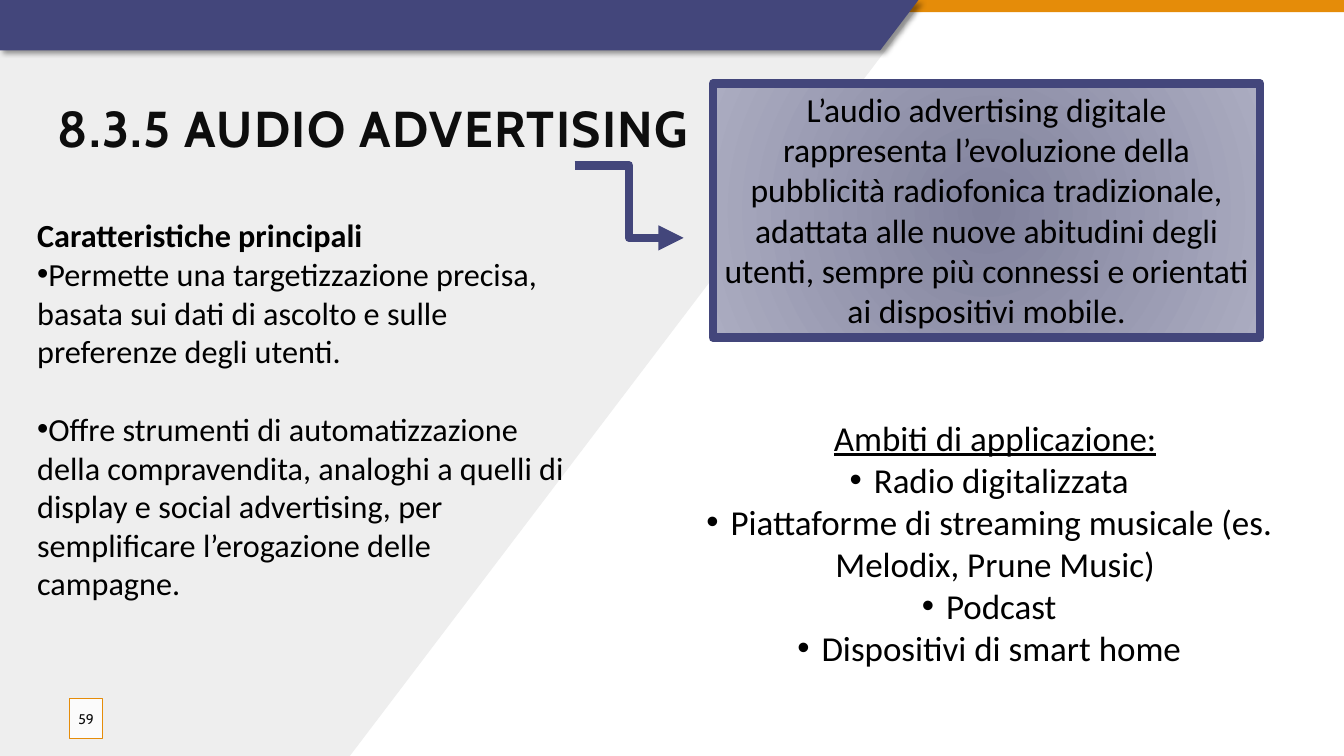
"""Build the audio advertising slide."""
import pptx
import pptx.util
import pptx.dml.color
import pptx.enum.shapes
import pptx.enum.text
import pptx.oxml
import pptx.oxml.ns

Inches = pptx.util.Inches
Pt = pptx.util.Pt
RGBColor = pptx.dml.color.RGBColor
MSO_SHAPE = pptx.enum.shapes.MSO_SHAPE
ALIGN = pptx.enum.text.PP_ALIGN
ANCHOR = pptx.enum.text.MSO_ANCHOR
AUTO_SIZE = pptx.enum.text.MSO_AUTO_SIZE
qn = pptx.oxml.ns.qn

INDIGO = RGBColor(0x43, 0x46, 0x7B)
ORANGE = RGBColor(0xE5, 0x8C, 0x09)
GREY = RGBColor(0xEE, 0xEE, 0xEE)
WHITE = RGBColor(0xFF, 0xFF, 0xFF)
BLACK = RGBColor(0, 0, 0)
INK = RGBColor(0x0D, 0x0D, 0x0D)


def xml(markup):
    """Parse one DrawingML element."""
    space = ' xmlns:a="http://schemas.openxmlformats.org/drawingml/2006/main"'
    name = markup[1:].split(">")[0].split("/")[0].split(" ")[0]
    return pptx.oxml.parse_xml(markup.replace(name, name + space, 1))


def write(para, text, size, font="Calibri", color=BLACK, align=ALIGN.LEFT):
    """Add one formatted run to a paragraph and return it."""
    para.alignment = align
    span = para.add_run()
    span.text = text
    span.font.size = Pt(size)
    span.font.name = font
    span.font.color.rgb = color
    return span


deck = pptx.Presentation()
deck.slide_width = Inches(13.33)
deck.slide_height = Inches(7.5)
page = deck.slides.add_slide(deck.slide_layouts[5])
shapes = page.shapes

backdrop_points = [(0, 0), (911, 0), (911, 7), (347, 750), (0, 750)]
banner_points = [(0, 0), (911, 0), (873, 50), (0, 50)]
outlines = []
for points in (backdrop_points, banner_points):
    builder = shapes.build_freeform(0, 0, scale=Inches(0.01))
    builder.add_line_segments(points[1:], close=True)
    outlines.append(builder.convert_to_shape())
backdrop, banner = outlines
stripe = shapes.add_shape(MSO_SHAPE.RECTANGLE, 0, 0, Inches(13.33), Inches(0.12))
banner.element.addprevious(stripe.element)
for shape, color in ((backdrop, GREY), (stripe, ORANGE), (banner, INDIGO)):
    shape.shadow.inherit = False
    shape.fill.solid()
    shape.fill.fore_color.rgb = color
    shape.line.fill.background()
banner.element.spPr.find(qn("a:effectLst")).append(xml(
    '<a:outerShdw blurRad="50800" dist="38100" dir="2700000" algn="tl" rotWithShape="0">'
    '<a:srgbClr val="000000"><a:alpha val="40000"/></a:srgbClr></a:outerShdw>'))

title = shapes.title
title.element.getparent().append(title.element)
title.left, title.top = Inches(0.47), Inches(0.91)
title.width, title.height = Inches(6.6), Inches(0.46)
title.text_frame.auto_size = AUTO_SIZE.NONE
title.text_frame.vertical_anchor = ANCHOR.TOP
span = write(title.text_frame.paragraphs[0], "8.3.5 AUDIO ADVERTISING", 36, "Cabin", INK)
span.font.bold = True
span.font._element.set("spc", "100")

number = shapes.add_shape(
    MSO_SHAPE.RECTANGLE, Inches(0.69), Inches(6.93), Inches(0.33), Inches(0.4))
number.shadow.inherit = False
number.fill.solid()
number.fill.fore_color.rgb = WHITE
number.element.spPr.find(".//" + qn("a:srgbClr")).append(xml('<a:alpha val="82000"/>'))
number.line.color.rgb = ORANGE
number.line.width = Pt(0.75)
number.text_frame.margin_left = number.text_frame.margin_right = 0
number.text_frame.vertical_anchor = ANCHOR.MIDDLE
write(number.text_frame.paragraphs[0], "59", 10, "Cabin", INK, ALIGN.CENTER)

definition = shapes.add_shape(
    MSO_SHAPE.RECTANGLE, Inches(7.07), Inches(0.83), Inches(5.43), Inches(2.52))
definition.shadow.inherit = False
definition.line.color.rgb = INDIGO
definition.line.width = Pt(6)
definition.element.spPr.find(qn("a:ln")).addprevious(xml(
    '<a:gradFill rotWithShape="1"><a:gsLst>'
    '<a:gs pos="0"><a:srgbClr val="81829C"/></a:gs>'
    '<a:gs pos="100000"><a:srgbClr val="ABACC1"/></a:gs></a:gsLst>'
    '<a:path path="circle"><a:fillToRect l="100000" t="100000" r="100000" b="100000"/>'
    '</a:path></a:gradFill>'))
definition.text_frame.word_wrap = True
definition.text_frame.auto_size = AUTO_SIZE.SHAPE_TO_FIT_TEXT
definition.text_frame.vertical_anchor = ANCHOR.TOP
write(definition.text_frame.paragraphs[0],
      "L’audio advertising digitale rappresenta l’evoluzione della pubblicità radiofonica "
      "tradizionale, adattata alle nuove abitudini degli utenti, sempre più connessi e "
      "orientati ai dispositivi mobile.", 24, align=ALIGN.CENTER)

features = [
    "Caratteristiche principali",
    "Permette una targetizzazione precisa, basata sui dati di ascolto e sulle "
    "preferenze degli utenti.",
    "Offre strumenti di automatizzazione della compravendita, analoghi a quelli di "
    "display e social advertising, per semplificare l’erogazione delle campagne.",
]
uses = [
    "Ambiti di applicazione:",
    "Radio digitalizzata",
    "Piattaforme di streaming musicale (es. Melodix, Prune Music)",
    "Podcast",
    "Dispositivi di smart home",
]
lists = []
for place, lines, size, align, indent in (
        ((0.27, 2.09, 5.46, 3.97), features, 23, ALIGN.LEFT, 0),
        ((6.67, 4.08, 6.4, 2.63), uses, 25, ALIGN.CENTER, -0.24)):
    frame = shapes.add_textbox(*map(Inches, place)).text_frame
    frame.word_wrap = True
    frame.auto_size = AUTO_SIZE.SHAPE_TO_FIT_TEXT
    for index, line in enumerate(lines):
        para = frame.add_paragraph() if index else frame.paragraphs[0]
        write(para, line, size, align=align)
        if index:
            properties = para._p.get_or_add_pPr()
            properties.set("marL", "0")
            properties.set("indent", str(Inches(indent)))
            properties.append(xml('<a:buFont typeface="Arial"/>'))
            properties.append(xml('<a:buChar char="•"/>'))
    lists.append(frame.paragraphs)
feature_list, use_list = lists
feature_list[0].runs[0].font.bold = True
feature_list[2].space_before = Pt(28)
use_list[0].runs[0].font.underline = True

arrow = shapes.add_connector(
    pptx.enum.shapes.MSO_CONNECTOR.ELBOW,
    Inches(5.7), Inches(1.64), Inches(6.78), Inches(2.36))
arrow.line.color.rgb = INDIGO
arrow.line.width = Pt(6)
arrow.element.spPr.find(qn("a:ln")).append(xml('<a:tailEnd type="triangle"/>'))
arrow.element.spPr.append(xml("<a:effectLst/>"))

deck.save("out.pptx")
